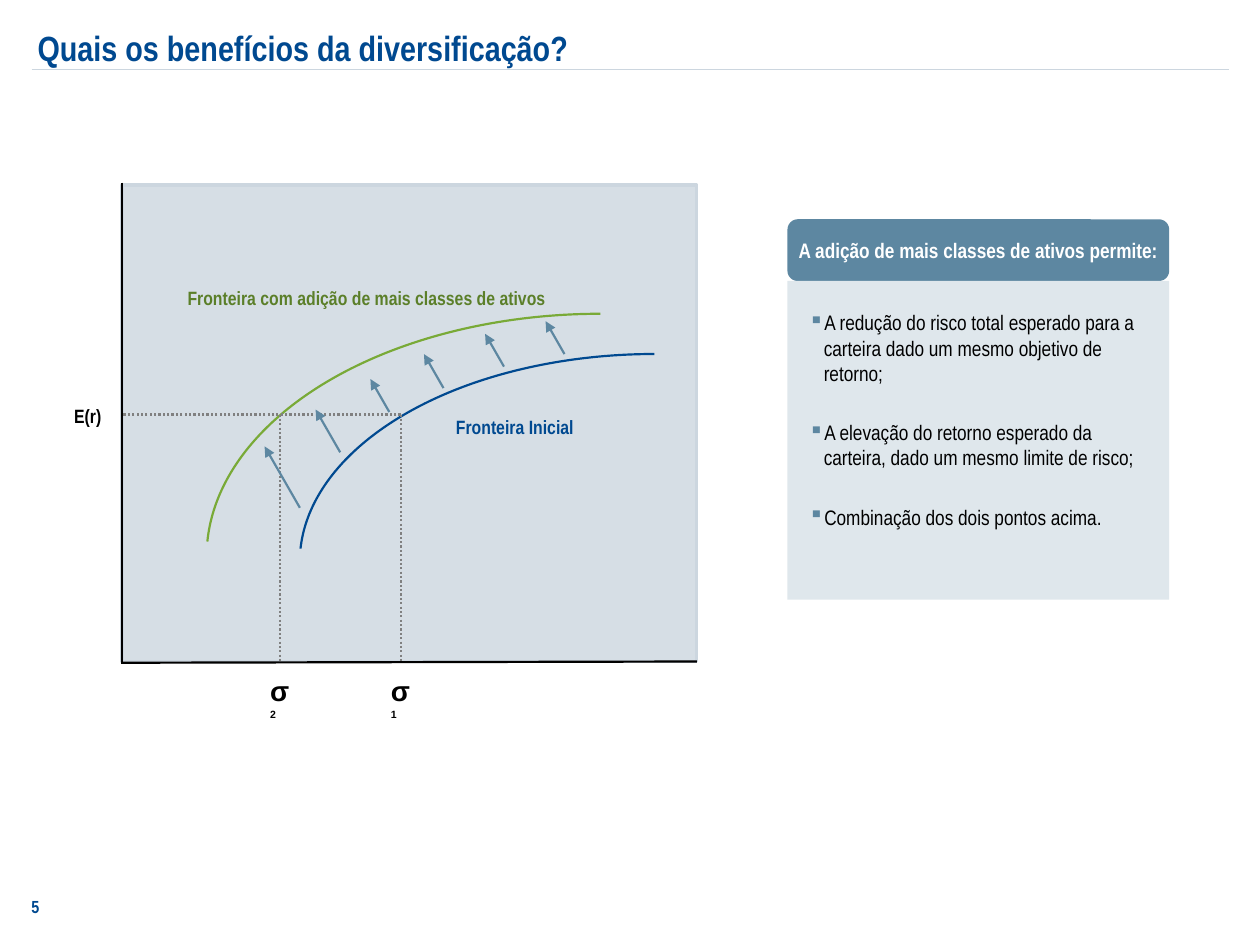
"""Build the slide on the benefits of diversification."""
from dataclasses import dataclass

from lxml import etree
from pptx import Presentation
from pptx import util as u
from pptx.dml.color import RGBColor
from pptx.enum import dml, shapes, text
from pptx.oxml.ns import qn

COLORS = {
    "navy": "004990", "steel": "5D87A1", "mist": "CCD6DF", "pale": "DFE7EC",
    "green": "79AA37", "moss": "5B7F29", "gray": "808080",
    "black": "000000", "white": "FFFFFF",
}
COLUMNS, ROWS = 100, 75
NARROW = "Arial Narrow"

deck = Presentation()
deck.slide_width, deck.slide_height = u.Inches(10), u.Inches(7.5)
page = deck.slides.add_slide(deck.slide_layouts[6])


@dataclass(frozen=True)
class Area:
    """Place on the grid, in columns and rows."""
    column: float
    row: float
    wide: float
    high: float

    def lengths(self) -> tuple[int, int, int, int]:
        """Give left, top, width and height."""
        return (across(self.column), down(self.row),
                across(self.wide), down(self.high))


@dataclass(frozen=True)
class Arrow:
    """Shift of the frontier, from its start on the grid."""
    column: float
    row: float
    length: float


@dataclass(frozen=True)
class Risk:
    """Risk level marked on the horizontal axis."""
    column: float
    index: str


@dataclass(frozen=True)
class Frontier:
    """Efficient frontier as a quarter of an ellipse."""
    area: Area
    color: str


def across(columns: float) -> int:
    """Turn columns into a length."""
    return round(deck.slide_width * columns / COLUMNS)


def down(rows: float) -> int:
    """Turn rows into a length."""
    return round(deck.slide_height * rows / ROWS)


def rgb(name: str) -> RGBColor:
    """Look up a colour."""
    return RGBColor.from_string(COLORS[name])


def add_text(para, words: str, *, size: float, color: str = "black",
             bold: bool = True, font: str = NARROW) -> None:
    """Add a formatted run to a paragraph."""
    span = para.add_run()
    span.text = words
    span.font.name, span.font.size, span.font.bold = font, u.Pt(size), bold
    span.font.color.rgb = rgb(color)


def add_box(area: Area, *, wrap: bool = True):
    """Add an empty text box and return its frame."""
    frame = page.shapes.add_textbox(*area.lengths()).text_frame
    frame.word_wrap = wrap
    return frame


def add_label(area: Area, words: str, *, wrap: bool = False, **style) -> None:
    """Add a text box with one run."""
    add_text(add_box(area, wrap=wrap).paragraphs[0], words, **style)


def add_form(kind, area: Area, *, fill: str = "", line: str = "",
             width: float = 1.25):
    """Add a preset shape."""
    form = page.shapes.add_shape(kind, *area.lengths())
    form.shadow.inherit = False
    if fill:
        form.fill.solid()
        form.fill.fore_color.rgb = rgb(fill)
    else:
        form.fill.background()
    if line:
        form.line.color.rgb = rgb(line)
        form.line.width = u.Pt(width)
    else:
        form.line.fill.background()
    return form


def add_line(start: tuple[float, float], end: tuple[float, float], *,
             color: str = "black", width: float = 1.25,
             dotted: bool = False, arrow: bool = False) -> None:
    """Add a straight line between two grid points."""
    line = page.shapes.add_connector(
        shapes.MSO_CONNECTOR.STRAIGHT, across(start[0]), down(start[1]),
        across(end[0]), down(end[1]))
    line.line.color.rgb = rgb(color)
    line.line.width = u.Pt(width)
    if dotted:
        line.line.dash_style = dml.MSO_LINE.ROUND_DOT
    if arrow:
        etree.SubElement(line.line._get_or_add_ln(), qn("a:tailEnd"), type="triangle")
    etree.SubElement(line._element.spPr, qn("a:effectLst"))


def add_bullet(para, words: str) -> None:
    """Add a bulleted sentence."""
    marks = para._p.get_or_add_pPr()
    marks.set("marL", str(u.Inches(0.31)))
    marks.set("indent", str(u.Inches(-0.12)))
    tint = etree.SubElement(marks, qn("a:buClr"))
    etree.SubElement(tint, qn("a:srgbClr"), val=COLORS["steel"])
    etree.SubElement(marks, qn("a:buChar"), char="▪")
    add_text(para, words, size=12, bold=False)


def draw_chart() -> None:
    """Draw the two frontiers, their shifts and the axes."""
    left, bottom, level = 9.7, 52.6, 32.9
    plot = add_form(shapes.MSO_SHAPE.RECTANGLE, Area(left, 14.7, 45.6, 37.8),
                    fill="mist", line="mist", width=2)
    tint = plot._element.spPr.find(qn("a:solidFill"))[0]
    etree.SubElement(tint, qn("a:alpha"), val="80000")

    for frontier in (Frontier(Area(23.8, 28.1, 56.3, 33), "navy"),
                     Frontier(Area(16.4, 24.9, 62.5, 38.5), "green")):
        arc = add_form(shapes.MSO_SHAPE.ARC, frontier.area, line=frontier.color)
        arc.adjustments[0], arc.adjustments[1] = 109.29, 162

    risks = Risk(22.2, "2"), Risk(31.8, "1")
    add_line((risks[-1].column, level), (left, level), color="gray", dotted=True)
    for risk in risks:
        add_line((risk.column, level), (risk.column, bottom), color="gray", dotted=True)
        para = add_box(Area(risk.column - 1.75, 53, 3.7, 3.7)).paragraphs[0]
        add_text(para, "σ", size=16, font="Arial")
        add_text(para, risk.index, size=6, font="Arial")

    for arrow in (Arrow(23.8, 40.3, 5.6), Arrow(27, 35.9, 3.9),
                  Arrow(30.9, 32.7, 3), Arrow(35.2, 30.8, 3.1),
                  Arrow(40, 29.1, 3), Arrow(44.8, 28.1, 3)):
        tip = arrow.column - 0.5 * arrow.length, arrow.row - 0.87 * arrow.length
        add_line((arrow.column, arrow.row), tip, color="steel", arrow=True)

    add_label(Area(4.9, 31.6, 4.2, 2.9), "E(r)", size=11)
    add_label(Area(35.2, 32.5, 11.4, 2.9), "Fronteira Inicial", size=11, color="navy")
    add_label(Area(13.9, 22.2, 30.6, 2.9),
              "Fronteira com adição de mais classes de ativos", size=11, color="moss")
    add_line((left, 14.5), (left, 52.7))
    add_line((left, bottom), (55.3, 52.5))


def draw_panel() -> None:
    """Draw the panel with the three gains."""
    left, width, split = 62.5, 30.3, 22.3
    header = add_form(shapes.MSO_SHAPE.ROUNDED_RECTANGLE,
                      Area(left, 17.4, width, 4.9), fill="steel")
    frame = header.text_frame
    frame.margin_left = frame.margin_right = 0
    frame.word_wrap = True
    frame.vertical_anchor = text.MSO_ANCHOR.MIDDLE
    frame.paragraphs[0].alignment = text.PP_ALIGN.CENTER
    add_text(frame.paragraphs[0], "A adição de mais classes de ativos permite:",
             size=12, color="white")
    add_form(shapes.MSO_SHAPE.RECTANGLE, Area(left, split, width, 25.3), fill="pale")

    gains = (
        "A redução do risco total esperado para a carteira dado um mesmo objetivo de retorno;",
        "A elevação do retorno esperado da carteira, dado um mesmo limite de risco;",
        "Combinação dos dois pontos acima.",
    )
    frame = add_box(Area(61.3, 24.1, 31.6, 18.8))
    for number, gain in enumerate(gains):
        para = frame.add_paragraph() if number else frame.paragraphs[0]
        if number:
            para.space_before = u.Pt(19.5)
        add_bullet(para, gain)


if __name__ == "__main__":
    add_label(Area(1.5, 70.6, 4.6, 2.7), "5", wrap=True, size=10, color="navy")
    add_line((2.5, 5.5), (97.5, 5.5), color="mist", width=0.75)
    add_label(Area(2, 1.6, 96, 7.5), "Quais os benefícios da diversificação?",
              wrap=True, size=20, color="navy")
    draw_chart()
    draw_panel()
    deck.save("out.pptx")
